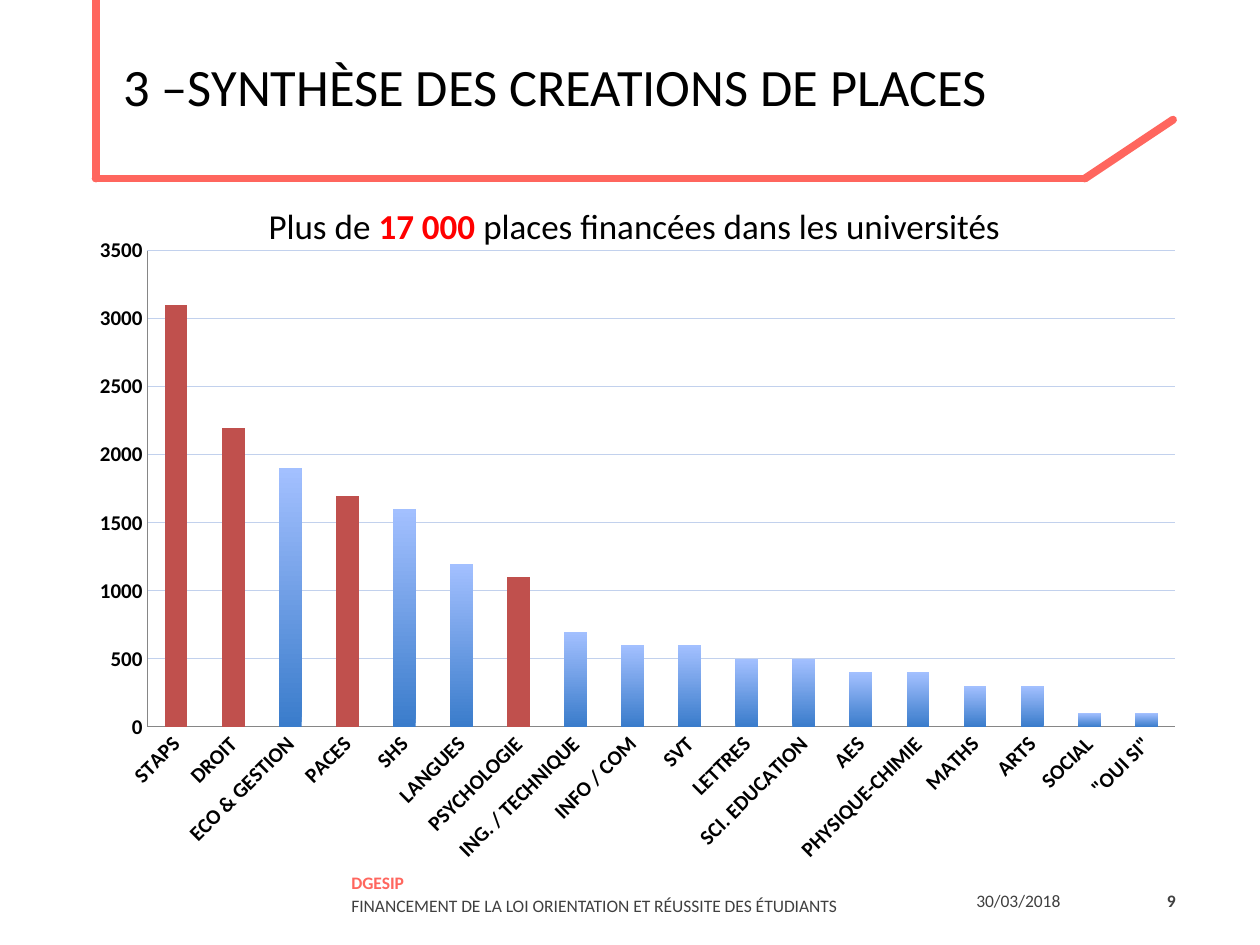
from lxml import etree
from pptx import Presentation
from pptx.chart.data import CategoryChartData
from pptx.dml.color import RGBColor
from pptx.enum.chart import XL_CHART_TYPE, XL_TICK_MARK
from pptx.enum.shapes import MSO_CONNECTOR
from pptx.enum.text import MSO_ANCHOR, PP_ALIGN
from pptx.oxml import parse_xml
from pptx.oxml.ns import nsdecls, qn
from pptx.util import Pt

COLUMNS = XL_CHART_TYPE.COLUMN_CLUSTERED
NO_TICK = XL_TICK_MARK.NONE
STRAIGHT = MSO_CONNECTOR.STRAIGHT
MIDDLE = MSO_ANCHOR.MIDDLE
LEFT, CENTER, RIGHT = PP_ALIGN.LEFT, PP_ALIGN.CENTER, PP_ALIGN.RIGHT

FONT = "Calibri"
BLACK = RGBColor(0x00, 0x00, 0x00)
GREY = RGBColor(0x40, 0x40, 0x40)
CORAL = RGBColor(0xFF, 0x66, 0x5E)
RED = RGBColor(0xFF, 0x00, 0x00)
BRICK = RGBColor(0xC0, 0x50, 0x4D)
BLUE_DARK = RGBColor(0x3A, 0x7C, 0xCB)
BLUE_LIGHT = RGBColor(0xA3, 0xC0, 0xFF)
GRID_BLUE = RGBColor(0xC2, 0xD1, 0xED)
AXIS_GREY = RGBColor(0x86, 0x86, 0x86)

PLACES = {
    "STAPS": 3100, "DROIT": 2200, "ECO & GESTION": 1900, "PACES": 1700,
    "SHS": 1600, "LANGUES": 1200, "PSYCHOLOGIE": 1100,
    "ING. / TECHNIQUE": 700, "INFO / COM": 600, "SVT": 600, "LETTRES": 500,
    "SCI. EDUCATION": 500, "AES": 400, "PHYSIQUE-CHIMIE": 400, "MATHS": 300,
    "ARTS": 300, "SOCIAL": 100, '"OUI SI"': 100,
}
HIGHLIGHTED = ("STAPS", "DROIT", "PACES", "PSYCHOLOGIE")
FRAME_POINTS = [(54.7, 0), (54.7, 102), (620, 102), (670.3, 68.4)]
CHART_BOX = (44.6, 128.9, 639.4, 371.5)
PLOT_BOX = (84.3, 143.3, 587.1, 272.1)


def add_frame(slide):
    """Draw the coral line that runs down, under and up beside the title."""
    for start, end in zip(FRAME_POINTS, FRAME_POINTS[1:]):
        stroke = slide.shapes.add_connector(
            STRAIGHT, *(Pt(value) for value in start + end))
        stroke.line.color.rgb = CORAL
        stroke.line.width = Pt(4.5)
        properties = stroke._element.spPr
        properties.find(qn("a:ln")).set("cap", "rnd")
        etree.SubElement(properties, qn("a:effectLst"))


def add_text(slide, box, pieces, size, align=LEFT, line_spacing=None):
    """Add one paragraph; pieces are (text, colour, bold), "\\v" breaks a line."""
    frame = slide.shapes.add_textbox(*(Pt(value) for value in box)).text_frame
    frame.word_wrap = True
    frame.vertical_anchor = MIDDLE
    paragraph = frame.paragraphs[0]
    paragraph.alignment = align
    if line_spacing:
        paragraph.line_spacing = Pt(line_spacing)
    for text, color, bold in pieces:
        if text == "\v":
            paragraph.add_line_break()
            continue
        run = paragraph.add_run()
        run.text = text
        run.font.name = FONT
        run.font.size = Pt(size)
        run.font.bold = bold
        run.font.color.rgb = color


def style_axis(axis):
    axis.major_tick_mark = NO_TICK
    axis.minor_tick_mark = NO_TICK
    axis.format.line.color.rgb = AXIS_GREY
    axis.format.line.width = Pt(0.75)
    font = axis.tick_labels.font
    font.name = FONT
    font.size = Pt(12)
    font.bold = True
    font.color.rgb = BLACK


def place_plot(chart):
    """Fix the inner plot area, as fractions of the chart."""
    left, top, full_width, full_height = CHART_BOX
    x, y, width, height = PLOT_BOX
    plot_area = chart._chartSpace.chart.plotArea
    for old in plot_area.findall(qn("c:layout")):
        plot_area.remove(old)
    plot_area.insert(0, parse_xml(
        f'<c:layout {nsdecls("c")}><c:manualLayout>'
        '<c:layoutTarget val="inner"/>'
        '<c:xMode val="edge"/><c:yMode val="edge"/>'
        f'<c:x val="{(x - left) / full_width}"/>'
        f'<c:y val="{(y - top) / full_height}"/>'
        f'<c:w val="{width / full_width}"/>'
        f'<c:h val="{height / full_height}"/>'
        '</c:manualLayout></c:layout>'))


def color_columns(series):
    fill = series.format.fill
    fill.gradient()
    fill.gradient_angle = 90
    for stop, color in zip(fill.gradient_stops, (BLUE_DARK, BLUE_LIGHT)):
        stop.color.rgb = color
    for index, subject in enumerate(PLACES):
        if subject in HIGHLIGHTED:
            column_fill = series.points[index].format.fill
            column_fill.solid()
            column_fill.fore_color.rgb = BRICK


def add_places_chart(slide):
    data = CategoryChartData()
    data.categories = list(PLACES)
    data.add_series("Places", list(PLACES.values()))
    chart = slide.shapes.add_chart(
        COLUMNS, *(Pt(value) for value in CHART_BOX), data).chart
    chart.has_legend = False
    chart.has_title = False
    chart.font.name = FONT
    chart.font.size = Pt(10)
    chart.font.color.rgb = BLACK
    plot = chart.plots[0]
    plot.gap_width = 150
    plot.vary_by_categories = False
    color_columns(plot.series[0])

    subjects, counts = chart.category_axis, chart.value_axis
    style_axis(subjects)
    style_axis(counts)
    label_body = subjects._element.find(qn("c:txPr")).find(qn("a:bodyPr"))
    label_body.set("rot", "-2700000")
    label_body.set("vert", "horz")
    counts.minimum_scale, counts.maximum_scale = 0, 3500
    counts.major_unit = 500
    counts.has_major_gridlines = True
    grid = counts.major_gridlines.format.line
    grid.color.rgb = GRID_BLUE
    grid.width = Pt(0.75)
    place_plot(chart)


def main():
    deck = Presentation()
    deck.slide_width, deck.slide_height = Pt(720), Pt(540)
    slide = deck.slides.add_slide(deck.slide_layouts[6])

    add_frame(slide)
    add_text(slide, (63.4, 11.5, 620.6, 75),
             [("3 –SYNTHÈSE DES CREATIONS DE PLACES", BLACK, False)], 30)
    add_text(slide, (647.3, 500.4, 31.7, 28.8), [("9", GREY, True)], 10, RIGHT)
    add_text(slide, (193.7, 496, 411.8, 28.8),
             [("DGESIP", CORAL, True), ("\v", None, None),
              ("FINANCEMENT DE LA LOI ORIENTATION ET RÉUSSITE DES ÉTUDIANTS",
               GREY, False)], 10, line_spacing=13.3)
    add_text(slide, (58.3, 113, 608.4, 31.7),
             [("Plus de ", BLACK, False), ("17 000 ", RED, True),
              ("places financées dans les universités", BLACK, False)],
             20, CENTER)
    add_text(slide, (550.8, 500.4, 96.5, 28.8),
             [("30/03/2018", GREY, False)], 10)
    add_places_chart(slide)

    deck.save("out.pptx")


if __name__ == "__main__":
    main()
